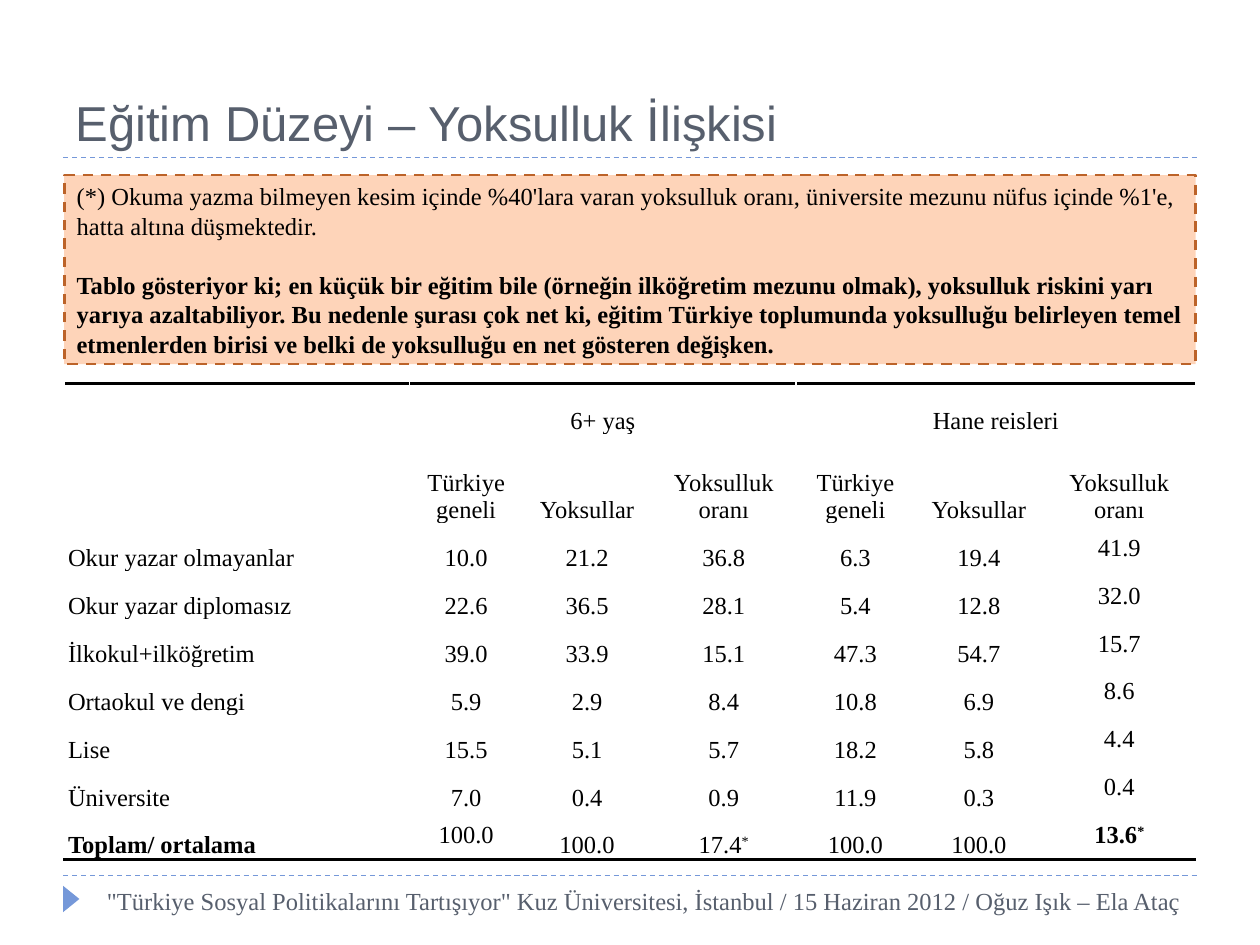
import pptx
import pptx.dml.color
import pptx.enum.dml
import pptx.enum.shapes
import pptx.enum.text
import pptx.oxml
import pptx.oxml.ns
import pptx.util
from lxml import etree

Inches, Pt = pptx.util.Inches, pptx.util.Pt
ALIGN = pptx.enum.text.PP_ALIGN
ANCHOR = pptx.enum.text.MSO_ANCHOR
DASH = pptx.enum.dml.MSO_LINE.DASH
SHAPE = pptx.enum.shapes.MSO_SHAPE
qn = pptx.oxml.ns.qn

COLORS = {
    "text": "000000",
    "heading": "575F6D",
    "accent": "7598D9",
    "note_fill": "FE8637",
    "note_line": "BC6329",
    "cell": "FFFFFF",
}
LEFT, RIGHT = 0.5, 9.5

COLUMN_WIDTHS = [2.74, 0.9, 1.02, 1.15, 0.94, 1.02, 1.21]
ROW_HEIGHTS = [0.41, 0.71] + [0.38] * 7
GROUPS = {1: "6+ yaş", 4: "Hane reisleri"}
MEASURES = ["Türkiye geneli", "Yoksullar", "Yoksulluk oranı"]
EDUCATION_LEVELS = [
    ["Okur yazar olmayanlar", "10.0", "21.2", "36.8", "6.3", "19.4", "41.9"],
    ["Okur yazar diplomasız", "22.6", "36.5", "28.1", "5.4", "12.8", "32.0"],
    ["İlkokul+ilköğretim", "39.0", "33.9", "15.1", "47.3", "54.7", "15.7"],
    ["Ortaokul ve dengi", "5.9", "2.9", "8.4", "10.8", "6.9", "8.6"],
    ["Lise", "15.5", "5.1", "5.7", "18.2", "5.8", "4.4"],
    ["Üniversite", "7.0", "0.4", "0.9", "11.9", "0.3", "0.4"],
    ["Toplam/ ortalama", "100.0", "100.0", "17.4*", "100.0", "100.0", "13.6*"],
]
FINDING = (
    "(*) Okuma yazma bilmeyen kesim içinde %40'lara varan yoksulluk oranı, "
    "üniversite mezunu nüfus içinde %1'e, hatta altına düşmektedir."
)
CONCLUSION = (
    "Tablo gösteriyor ki; en küçük bir eğitim bile (örneğin ilköğretim mezunu olmak), "
    "yoksulluk riskini yarı yarıya azaltabiliyor. Bu nedenle şurası çok net ki, eğitim "
    "Türkiye toplumunda yoksulluğu belirleyen temel etmenlerden birisi ve belki de "
    "yoksulluğu en net gösteren değişken."
)
EVENT = (
    '"Türkiye Sosyal Politikalarını Tartışıyor" Kuz Üniversitesi, İstanbul / '
    "15 Haziran 2012 / Oğuz Işık – Ela Ataç"
)


def rgb(name):
    return pptx.dml.color.RGBColor.from_string(COLORS[name])


def write(paragraph, text, *, size=14, font="Times New Roman", color="text",
          bold=False, align=ALIGN.LEFT, after=0, superscript=False):
    paragraph.alignment = align
    paragraph.space_after = Pt(after)
    run = paragraph.add_run()
    run.text = text
    run.font.size = Pt(size)
    run.font.name = font
    run.font.bold = bold
    run.font.color.rgb = rgb(color)
    if superscript:
        run.font._element.set("baseline", "30000")


def add_rule(slide, y):
    rule = slide.shapes.add_connector(
        pptx.enum.shapes.MSO_CONNECTOR.STRAIGHT,
        Inches(LEFT), Inches(y), Inches(RIGHT), Inches(y))
    rule.line.color.rgb = rgb("accent")
    rule.line.width = Pt(0.75)
    rule.line.dash_style = DASH
    etree.SubElement(rule._element.spPr, qn("a:effectLst"))


def add_marker(slide):
    marker = slide.shapes.add_shape(
        SHAPE.ISOSCELES_TRIANGLE, Inches(0.46), Inches(7.07), Inches(0.21), Inches(0.13))
    marker.rotation = 90
    marker.shadow.inherit = False
    marker.fill.solid()
    marker.fill.fore_color.rgb = rgb("accent")
    marker.line.fill.background()


def add_title(slide):
    title = slide.shapes.title
    title.left, title.top = Inches(LEFT), Inches(0.17)
    title.width, title.height = Inches(RIGHT - LEFT), Inches(1.08)
    title.text_frame.vertical_anchor = ANCHOR.BOTTOM
    write(title.text_frame.paragraphs[0], "Eğitim Düzeyi – Yoksulluk İlişkisi",
          size=28, font="Arial", color="heading")


def add_note(slide):
    note = slide.shapes.add_shape(
        SHAPE.RECTANGLE, Inches(0.51), Inches(1.39), Inches(8.98), Inches(1.5))
    note.shadow.inherit = False
    note.fill.solid()
    note.fill.fore_color.rgb = rgb("note_fill")
    tint = note._element.spPr.find(".//" + qn("a:srgbClr"))
    etree.SubElement(tint, qn("a:alpha"), val="35000")
    note.line.color.rgb = rgb("note_line")
    note.line.width = Pt(1.5)
    note.line.dash_style = DASH
    frame = note.text_frame
    frame.word_wrap = True
    frame.vertical_anchor = ANCHOR.MIDDLE
    write(frame.paragraphs[0], FINDING, after=17)
    write(frame.add_paragraph(), CONCLUSION, bold=True)


def add_border(cell, side):
    border = pptx.oxml.parse_xml(
        f'<a:{side} {pptx.oxml.ns.nsdecls("a")} w="{Pt(2)}"><a:solidFill>'
        f'<a:srgbClr val="{COLORS["text"]}"/></a:solidFill></a:{side}>')
    cell._tc.get_or_add_tcPr().insert(0, border)


def fill_cell(cell, text, anchor=ANCHOR.BOTTOM, **style):
    cell.margin_left = cell.margin_right = Inches(0.03)
    cell.margin_top = cell.margin_bottom = 0
    cell.vertical_anchor = anchor
    cell.fill.solid()
    cell.fill.fore_color.rgb = rgb("cell")
    paragraph = cell.text_frame.paragraphs[0]
    if text:
        write(paragraph, text.rstrip("*"), **style)
    if text.endswith("*"):
        write(paragraph, "*", superscript=True, **style)


def add_education_table(slide):
    group_row = [GROUPS.get(column, "") for column in range(len(COLUMN_WIDTHS))]
    rows = [group_row, [""] + MEASURES * 2] + EDUCATION_LEVELS
    last_row, last_column = len(rows) - 1, len(COLUMN_WIDTHS) - 1
    table = slide.shapes.add_table(
        len(rows), len(COLUMN_WIDTHS), Inches(0.51), Inches(3.04),
        Inches(sum(COLUMN_WIDTHS)), Inches(sum(ROW_HEIGHTS))).table
    table.first_row = table.horz_banding = False
    for column, width in zip(table.columns, COLUMN_WIDTHS):
        column.width = Inches(width)
    for row, height in zip(table.rows, ROW_HEIGHTS):
        row.height = Inches(height)

    for r, values in enumerate(rows):
        for c, value in enumerate(values):
            # The last column and the first total sit mid-cell
            raised = (r > 1 and c == last_column) or (r, c) == (last_row, 1)
            fill_cell(table.cell(r, c), value,
                      anchor=ANCHOR.MIDDLE if raised else ANCHOR.BOTTOM,
                      align=ALIGN.CENTER if c else ALIGN.JUSTIFY,
                      bold=r == last_row and c in (0, last_column))

    # Heavy rules above and below the table
    for c in range(len(COLUMN_WIDTHS)):
        add_border(table.cell(0, c), "lnT")
        add_border(table.cell(last_row, c), "lnB")
    for c in GROUPS:
        table.cell(0, c).merge(table.cell(0, c + len(MEASURES) - 1))


def add_footer(slide):
    footer = slide.shapes.add_textbox(Inches(0.75), Inches(6.98), Inches(8.82), Inches(0.4))
    footer.text_frame.word_wrap = True
    write(footer.text_frame.paragraphs[0], EVENT, color="heading")


def main():
    deck = pptx.Presentation()
    deck.slide_width, deck.slide_height = Inches(10), Inches(7.5)
    slide = deck.slides.add_slide(deck.slide_layouts[5])
    for y in (1.25, 6.95):
        add_rule(slide, y)
    add_marker(slide)
    add_education_table(slide)
    add_footer(slide)
    add_title(slide)
    add_note(slide)
    deck.save("out.pptx")


if __name__ == "__main__":
    main()
